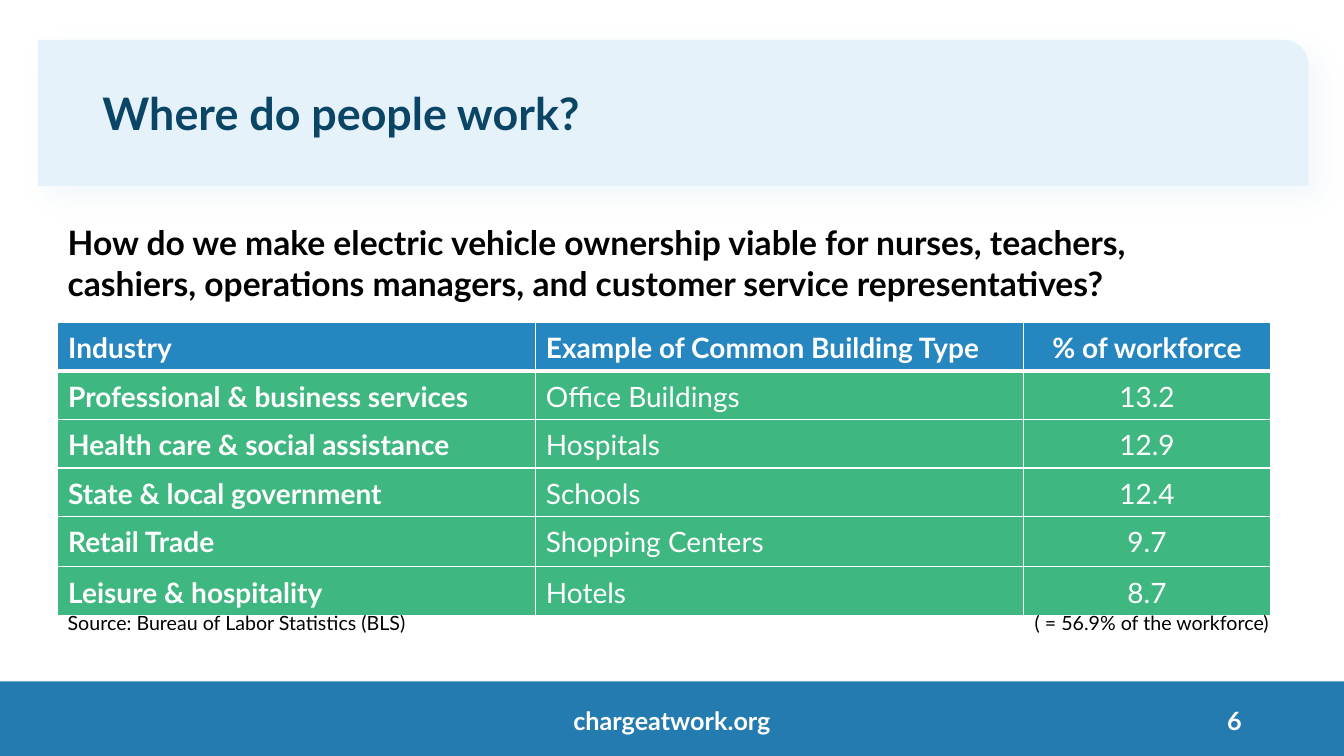
from lxml import etree
from pptx import Presentation
from pptx.dml.color import RGBColor
from pptx.enum.shapes import MSO_SHAPE as Preset
from pptx.enum.text import MSO_ANCHOR as Anchor, PP_ALIGN as Align
from pptx.oxml import parse_xml
from pptx.oxml.ns import nsdecls, qn
from pptx.util import Pt

PX = 9525  # EMU per px, 96 px to the inch
COLORS = {
    "navy": "0B4566", "pale": "E5F2FA", "footer": "237BAF",
    "header": "2686BF", "green": "3EB780", "white": "FFFFFF", "black": "000000",
}
FORMATS = {
    "title": {"size": 32, "bold": True, "color": "navy"},
    "question": {"size": 24, "bold": True, "color": "black"},
    "note": {"size": 14, "bold": False, "color": "black"},
    "footer": {"size": 18, "bold": True, "color": "white"},
    "label": {"size": 20, "bold": True, "color": "white"},
    "value": {"size": 20, "bold": False, "color": "white"},
}
ROWS = [
    ("Industry", "Example of Common Building Type", "% of workforce"),
    ("Professional & business services", "Office Buildings", "13.2"),
    ("Health care & social assistance", "Hospitals", "12.9"),
    ("State & local government", "Schools", "12.4"),
    ("Retail Trade", "Shopping Centers", "9.7"),
    ("Leisure & hospitality", "Hotels", "8.7"),
]
COLUMN_WIDTHS = (455, 465, 235)
ROW_HEIGHTS = (40, 42, 45, 39, 48, 41)


def rgb(name):
    return RGBColor.from_string(COLORS[name])


def emu(box):
    return [length * PX for length in box]


def write(frame, text, style, align=Align.LEFT, anchor=Anchor.TOP):
    frame.word_wrap = True
    frame.vertical_anchor = anchor
    paragraph = frame.paragraphs[0]
    paragraph.alignment = align
    run = paragraph.add_run()
    run.text = text
    values = FORMATS[style]
    settings = {"name": "Lato", "size": Pt(values["size"]), "bold": values["bold"]}
    for name, value in settings.items():
        setattr(run.font, name, value)
    run.font.color.rgb = rgb(values["color"])
    return paragraph


def add_text(slide, box, *text_settings):
    write(slide.shapes.add_textbox(*emu(box)).text_frame, *text_settings)


def add_block(slide, preset, box, color):
    shape = slide.shapes.add_shape(preset, *emu(box))
    shape.shadow.inherit = False
    shape.fill.solid()
    shape.fill.fore_color.rgb = rgb(color)
    shape.line.fill.background()
    return shape


def add_banner(slide, box):
    left, top, width, height = box
    banner = add_block(slide, Preset.ROUND_1_RECTANGLE, box, "pale")
    # Soft shadow
    effects = banner._element.spPr.find(qn("a:effectLst"))
    effects.append(parse_xml(
        f'<a:outerShdw {nsdecls("a")} blurRad="{Pt(20)}" dist="{Pt(10)}" '
        f'dir="2700000" algn="tl" rotWithShape="0"><a:srgbClr val="{COLORS["header"]}">'
        '<a:alpha val="5000"/></a:srgbClr></a:outerShdw>'))
    # Title in front of the banner
    title = slide.shapes.title
    banner._element.addnext(title._element)
    title.left, title.top, title.width, title.height = emu(
        (left + 52, top, width - 106, height))
    write(title.text_frame, "Where do people work?", "title", Align.LEFT, Anchor.MIDDLE)


def add_footer(slide, box):
    left, top, width, height = box
    add_block(slide, Preset.RECTANGLE, box, "footer")
    add_text(slide, (left + 424, top + 18, 432, 38), "chargeatwork.org", "footer",
             Align.CENTER, Anchor.MIDDLE)
    add_text(slide, (left + width - 376, top + 18, 288, 38), "6", "footer",
             Align.RIGHT, Anchor.MIDDLE)


def set_borders(cell, widths):
    properties = cell._tc.get_or_add_tcPr()
    for index, (side, width) in enumerate(widths.items()):
        line = etree.Element(qn(f"a:ln{side}"), w=str(Pt(width)))
        fill = etree.SubElement(line, qn("a:solidFill"))
        etree.SubElement(fill, qn("a:srgbClr"), val=COLORS["white"])
        properties.insert(index, line)


def add_workforce_table(slide, left, top):
    box = (left, top, sum(COLUMN_WIDTHS), sum(ROW_HEIGHTS))
    table = slide.shapes.add_table(len(ROWS), len(COLUMN_WIDTHS), *emu(box)).table
    for column, width in zip(table.columns, COLUMN_WIDTHS):
        column.width = width * PX
    for row_index, (row, height) in enumerate(zip(table.rows, ROW_HEIGHTS)):
        row.height = height * PX
        for column_index, cell in enumerate(row.cells):
            is_label = row_index == 0 or column_index == 0
            cell.margin_left = cell.margin_right = 10 * PX
            cell.margin_top = cell.margin_bottom = 6 * PX
            paragraph = write(cell.text_frame, ROWS[row_index][column_index],
                              "label" if is_label else "value",
                              Align.CENTER if column_index == 2 else Align.LEFT)
            paragraph.line_spacing = 1.07
            cell.fill.solid()
            cell.fill.fore_color.rgb = rgb("green" if row_index else "header")
            set_borders(cell, {"L": 1, "R": 1, "T": 3 if row_index == 1 else 1,
                               "B": 1 if row_index else 3})


def add_content(slide, box):
    left, top, width, height = box
    add_text(slide, (left, top, width, 87),
             "How do we make electric vehicle ownership viable for nurses, teachers, "
             "cashiers, operations managers, and customer service representatives?",
             "question")
    add_workforce_table(slide, left, top + 100)
    # Notes under the table
    note_top = top + height - 33
    add_text(slide, (left, note_top, 348, 33),
             "Source: Bureau of Labor Statistics (BLS)", "note")
    add_text(slide, (left + 921, note_top, 249, 33), "( = 56.9% of the workforce)", "note")


def main():
    presentation = Presentation()
    presentation.slide_width, presentation.slide_height = emu((1280, 720))
    slide = presentation.slides.add_slide(presentation.slide_layouts[5])
    add_footer(slide, (0, 649, 1280, 71))
    add_banner(slide, (36, 38, 1210, 139))
    add_content(slide, (55, 207, 1155, 403))
    presentation.save("out.pptx")


if __name__ == "__main__":
    main()
